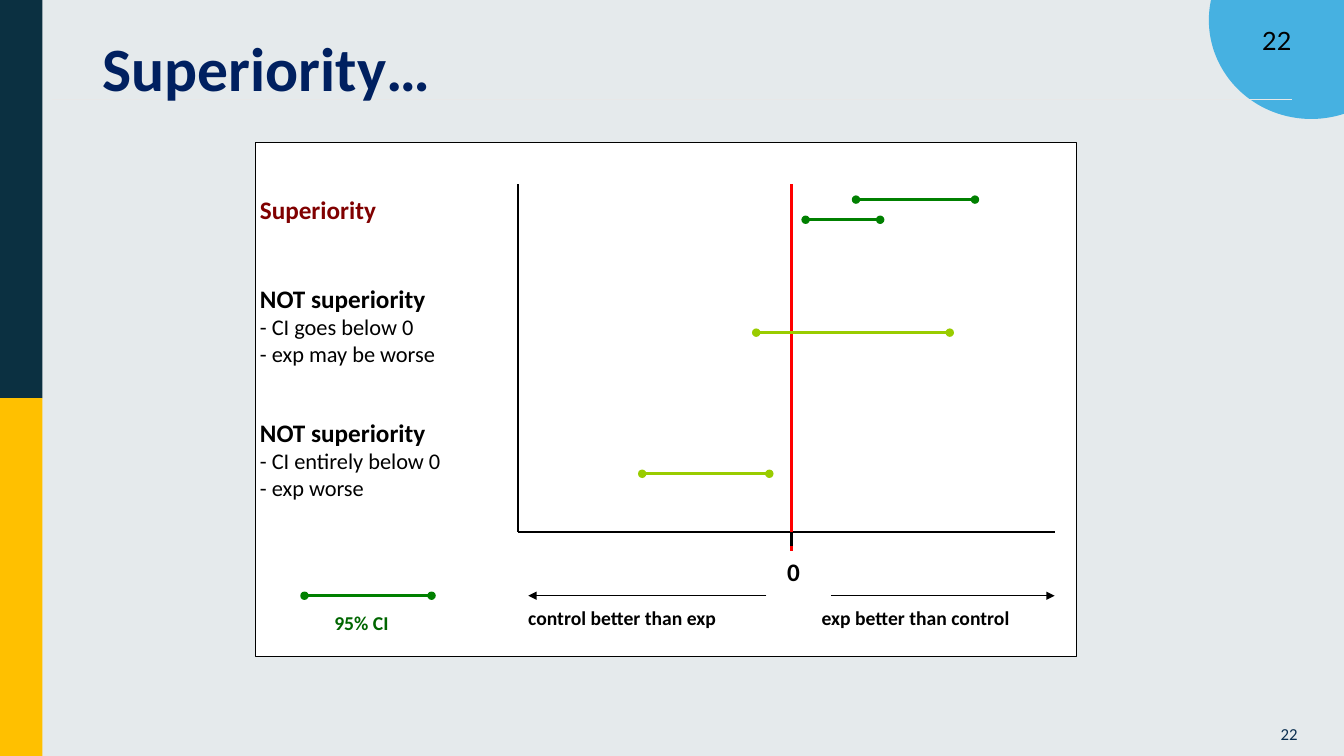
from lxml.etree import SubElement
from pptx import Presentation
from pptx.dml.color import RGBColor
from pptx.enum.shapes import MSO_CONNECTOR, MSO_SHAPE
from pptx.enum.text import MSO_ANCHOR, MSO_AUTO_SIZE, PP_ALIGN
from pptx.oxml.ns import qn
from pptx.util import Emu, Pt

PX = 9144  # 100 px to the inch
COLORS = {
    "background": "E5EAEC", "circle": "46B1E1", "navy": "0B3041", "gold": "FFC000",
    "rule": "E8E8E8", "white": "FFFFFF", "black": "000000", "red": "FF0000",
    "maroon": "800000", "green": "008000", "lime": "99CC00", "legend": "006600",
    "title": "002060", "footer": "0A2E4F",
}
AXIS_X, AXIS_Y, AXIS_TOP, AXIS_END, ZERO_X = 514, 528, 183, 1046, 785
ARROW_Y, LABEL_X, LABEL_W = 591, 248, 266


def px(*values):
    return [Emu(v * PX) for v in values]


def rgb(name):
    return RGBColor.from_string(COLORS[name])


def add_block(s, kind, box, fill, line=None, width=0.75):
    sp = s.shapes.add_shape(kind, *px(*box))
    sp.shadow.inherit = False
    sp.fill.solid()
    sp.fill.fore_color.rgb = rgb(fill)
    if line:
        sp.line.color.rgb = rgb(line)
        sp.line.width = Pt(width)
    else:
        sp.line.fill.background()


def add_line(s, start, end, color, width, head=None, tail=None):
    cx = s.shapes.add_connector(MSO_CONNECTOR.STRAIGHT, *px(*start, *end))
    cx.line.color.rgb = rgb(color)
    cx.line.width = Pt(width)
    ln = cx.line._get_or_add_ln()
    for tag, kind in (("a:headEnd", head), ("a:tailEnd", tail)):
        if kind:
            SubElement(ln, qn(tag), type=kind)
    SubElement(cx._element.spPr, qn("a:effectLst"))


def add_interval(s, left, right, y, color):
    """Draw a confidence interval with a dot at each limit."""
    add_line(s, (left, y), (right, y), color, 2, "oval", "oval")


def add_text(s, box, lines, color, align=PP_ALIGN.LEFT, font="Calibri", **frame):
    """Write lines of (text, size, bold) as one paragraph; frame sets text frame values."""
    tf = s.shapes.add_textbox(*px(*box)).text_frame
    for name, value in {"word_wrap": True, **frame}.items():
        setattr(tf, name, value)
    p = tf.paragraphs[0]
    p.alignment = align
    for i, (text, size, bold) in enumerate(lines):
        if i:
            p.add_line_break()
        r = p.add_run()
        r.text = text
        for name, value in {"name": font, "size": Pt(size), "bold": bold}.items():
            setattr(r.font, name, value)
        r.font.color.rgb = rgb(color)
    return p


def add_frame(s):
    """Draw the side bars, corner circle, rule, page numbers and title."""
    add_block(s, MSO_SHAPE.OVAL, (1200, -77, 201, 194), "circle", "circle", 1.5)
    add_text(s, (1242, 20, 50, 40), [("22", 18, False)], "black", font="Lato")
    add_block(s, MSO_SHAPE.RECTANGLE, (0, 0, 42, 395), "navy")
    add_block(s, MSO_SHAPE.RECTANGLE, (0, 395, 42, 355), "gold")
    add_line(s, (52, 99), (1281, 99), "rule", 1)
    add_text(s, (1217, 718, 70, 32), [("22", 12, False)], "footer", PP_ALIGN.RIGHT,
             margin_top=0, margin_right=0, margin_bottom=0)
    title = add_text(s, (92, 18, 1150, 105), [("Superiority…", 44, True)], "title",
                     vertical_anchor=MSO_ANCHOR.MIDDLE)
    title.line_spacing = 0.9


def add_axes(s):
    add_block(s, MSO_SHAPE.RECTANGLE, (253, 141, 815, 510), "white", "black")
    add_line(s, (AXIS_X, AXIS_TOP), (AXIS_X, AXIS_Y), "black", 1.5)
    add_line(s, (AXIS_X, AXIS_Y), (AXIS_END, AXIS_Y), "black", 1.5)
    add_line(s, (ZERO_X, AXIS_TOP), (ZERO_X, 547), "red", 2)
    add_line(s, (ZERO_X, AXIS_Y), (ZERO_X, 542), "black", 1.5)
    for start, end in ((760, 524), (824, AXIS_END)):
        add_line(s, (start, ARROW_Y), (end, ARROW_Y), "black", 0.75, tail="triangle")


def main():
    prs = Presentation()
    prs.slide_width, prs.slide_height = px(1333, 750)
    s = prs.slides.add_slide(prs.slide_layouts[6])
    s.background.fill.solid()
    s.background.fill.fore_color.rgb = rgb("background")

    add_frame(s)
    add_axes(s)

    for left, right, y, color in (
        (849, 967, 198, "green"), (799, 873, 218, "green"),
        (750, 942, 330, "lime"), (637, 763, 470, "lime"),
        (302, 428, ARROW_Y, "green"),
    ):
        add_interval(s, left, right, y, color)

    grow = {"auto_size": MSO_AUTO_SIZE.SHAPE_TO_FIT_TEXT}
    for y, h, color, heading, notes in (
        (188, 40, "maroon", "Superiority", ()),
        (276, 94, "black", "NOT superiority", ("- CI goes below 0", "- exp may be worse")),
        (409, 94, "black", "NOT superiority", ("- CI entirely below 0", "- exp worse")),
    ):
        lines = [(heading, 18, True)] + [(note, 16, False) for note in notes]
        add_text(s, (LABEL_X, y, LABEL_W, h), lines, color, **grow)

    for box, text, size, color, align in (
        ((770, 547, 34, 40), "0", 18, "black", PP_ALIGN.CENTER),
        ((805, 596, 276, 33), "exp better than control", 14, "black", PP_ALIGN.LEFT),
        ((514, 596, 281, 33), "control better than exp", 14, "black", PP_ALIGN.LEFT),
        ((302, 601, 113, 33), "95% CI", 14, "legend", PP_ALIGN.CENTER),
    ):
        add_text(s, box, [(text, size, True)], color, align, **grow)

    prs.save("out.pptx")


if __name__ == "__main__":
    main()
